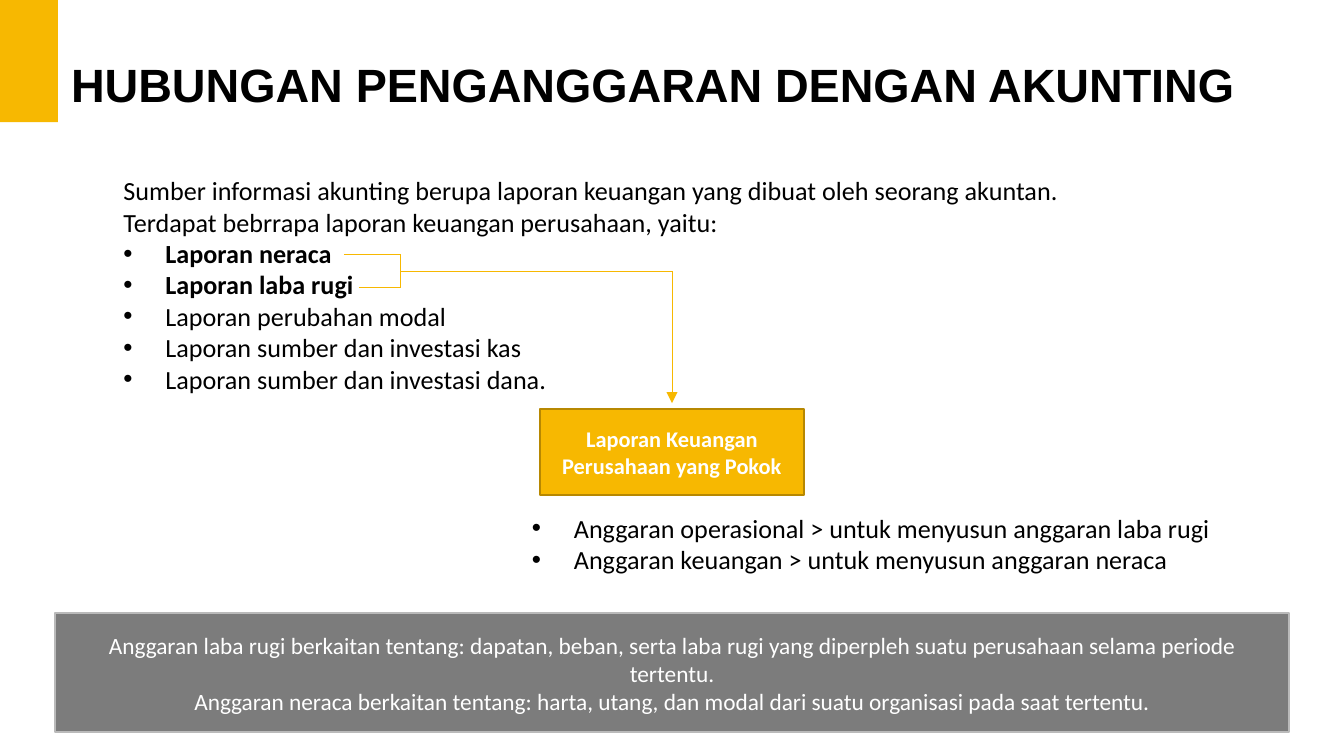
import pptx
import pptx.util
import pptx.dml.color
import pptx.enum.shapes
import pptx.enum.text
import pptx.oxml.ns
from dataclasses import dataclass
from lxml import etree

Pt = pptx.util.Pt
SHAPES = pptx.enum.shapes.MSO_SHAPE
ALIGN = pptx.enum.text.PP_ALIGN


@dataclass(frozen=True)
class Theme:
    gold: str = "F7B801"
    dark_gold: str = "B78801"
    gray: str = "7C7C7C"
    light_gray: str = "BABABA"
    black: str = "000000"
    white: str = "FFFFFF"
    heading: str = "Arial"
    body: str = "Calibri"
    title_size: float = 25
    body_size: float = 14
    note_size: float = 12.5
    label_size: float = 12
    border: float = 1
    wire: float = 0.5


theme = Theme()

TITLE = "HUBUNGAN PENGANGGARAN DENGAN AKUNTING"
INTRO = [
    "Sumber informasi akunting berupa laporan keuangan yang dibuat oleh seorang akuntan.",
    "Terdapat bebrrapa laporan keuangan perusahaan, yaitu:",
]
MAIN_REPORTS = ["Laporan neraca", "Laporan laba rugi"]
OTHER_REPORTS = [
    "Laporan perubahan modal",
    "Laporan sumber dan investasi kas",
    "Laporan sumber dan investasi dana.",
]
CORE_LABEL = "Laporan Keuangan Perusahaan yang Pokok"
BUDGETS = [
    "Anggaran operasional > untuk menyusun anggaran laba rugi",
    "Anggaran keuangan > untuk menyusun anggaran neraca",
]
NOTES = [
    "Anggaran laba rugi berkaitan tentang: dapatan, beban, serta laba rugi yang diperpleh "
    "suatu perusahaan selama periode tertentu.",
    "Anggaran neraca berkaitan tentang: harta, utang, dan modal dari suatu organisasi "
    "pada saat tertentu.",
]

WIDTH, HEIGHT = 720, 405
INDENT, HANGING = 7.9, 22.5
CORE_WIDTH, CORE_TOP, CORE_HEIGHT = 141.2, 219, 46.2
NOTE_MARGIN = 29.5
BRACKET_X = 214.6
NERACA_Y, LABA_RUGI_Y = 136.1, 154.1
TRUNK_Y = 145.4
ARROW_GAP = 3


def color(value):
    return pptx.dml.color.RGBColor.from_string(value)


def set_indent(para, left, hanging=0):
    properties = para._p.get_or_add_pPr()
    properties.set("marL", str(int(Pt(left))))
    properties.set("indent", str(-int(Pt(hanging))))
    if hanging:
        tag = pptx.oxml.ns.qn
        etree.SubElement(properties, tag("a:buFont"), typeface="Arial")
        etree.SubElement(properties, tag("a:buChar"), char="•")


def write(frame, lines, size, ink, font=theme.body, bold=(), bullets=(), left=0, align=None):
    for index, line in enumerate(lines):
        para = frame.paragraphs[0] if index == 0 else frame.add_paragraph()
        if line in bullets:
            set_indent(para, INDENT + HANGING, HANGING)
        elif left:
            set_indent(para, left)
        para.text = line
        para.alignment = align
        para.font.name = font
        para.font.size = Pt(size)
        para.font.bold = line in bold
        para.font.color.rgb = color(ink)


def add_text(page, bounds, lines, size, wrap=True, **style):
    box = page.shapes.add_textbox(*map(Pt, bounds))
    frame = box.text_frame
    frame.word_wrap = wrap
    frame.auto_size = pptx.enum.text.MSO_AUTO_SIZE.SHAPE_TO_FIT_TEXT
    write(frame, lines, size, theme.black, **style)


def add_panel(page, bounds, fill, border=None):
    panel = page.shapes.add_shape(SHAPES.RECTANGLE, *map(Pt, bounds))
    panel.shadow.inherit = False
    panel.fill.solid()
    panel.fill.fore_color.rgb = color(fill)
    if border:
        panel.line.color.rgb = color(border)
        panel.line.width = Pt(theme.border)
    else:
        panel.line.fill.background()
    panel.text_frame.word_wrap = True
    panel.text_frame.vertical_anchor = pptx.enum.text.MSO_ANCHOR.MIDDLE
    return panel.text_frame


def add_wire(page, start, end, arrow=False):
    straight = pptx.enum.shapes.MSO_CONNECTOR.STRAIGHT
    wire = page.shapes.add_connector(straight, *map(Pt, start + end))
    wire.line.color.rgb = color(theme.gold)
    wire.line.width = Pt(theme.wire)
    tag = pptx.oxml.ns.qn
    if arrow:
        etree.SubElement(wire.line._get_or_add_ln(), tag("a:tailEnd"), type="triangle")
    etree.SubElement(wire._element.spPr, tag("a:effectLst"))


def main():
    deck = pptx.Presentation()
    deck.slide_width, deck.slide_height = Pt(WIDTH), Pt(HEIGHT)
    page = deck.slides.add_slide(deck.slide_layouts[6])
    center = WIDTH / 2

    add_text(page, (31, 26.6, 643.7, 37.4), [TITLE], theme.title_size,
             wrap=False, font=theme.heading, bold=[TITLE])
    add_text(page, (51.1, 90, 603.4, 126), INTRO + MAIN_REPORTS + OTHER_REPORTS,
             theme.body_size, bold=MAIN_REPORTS,
             bullets=MAIN_REPORTS + OTHER_REPORTS, left=INDENT)

    core = add_panel(page, (center - CORE_WIDTH / 2, CORE_TOP, CORE_WIDTH, CORE_HEIGHT),
                     theme.gold, theme.dark_gold)
    write(core, [CORE_LABEL], theme.label_size, theme.white,
          bold=[CORE_LABEL], align=ALIGN.CENTER)
    add_text(page, (270, 270.7, 429, 41), BUDGETS, theme.body_size, bullets=BUDGETS)

    add_wire(page, (192.2, LABA_RUGI_Y), (BRACKET_X, LABA_RUGI_Y))
    add_wire(page, (184.3, NERACA_Y), (BRACKET_X, NERACA_Y))
    add_wire(page, (BRACKET_X, NERACA_Y), (BRACKET_X, LABA_RUGI_Y))
    add_wire(page, (BRACKET_X, TRUNK_Y), (center, TRUNK_Y))
    add_wire(page, (center, TRUNK_Y), (center, CORE_TOP - ARROW_GAP), arrow=True)

    notes = add_panel(page, (NOTE_MARGIN, 328.4, WIDTH - 2 * NOTE_MARGIN, 64),
                      theme.gray, theme.light_gray)
    write(notes, NOTES, theme.note_size, theme.white, align=ALIGN.CENTER)
    add_panel(page, (0, 0, 31, 65.5), theme.gold)

    deck.save("out.pptx")


if __name__ == "__main__":
    main()
